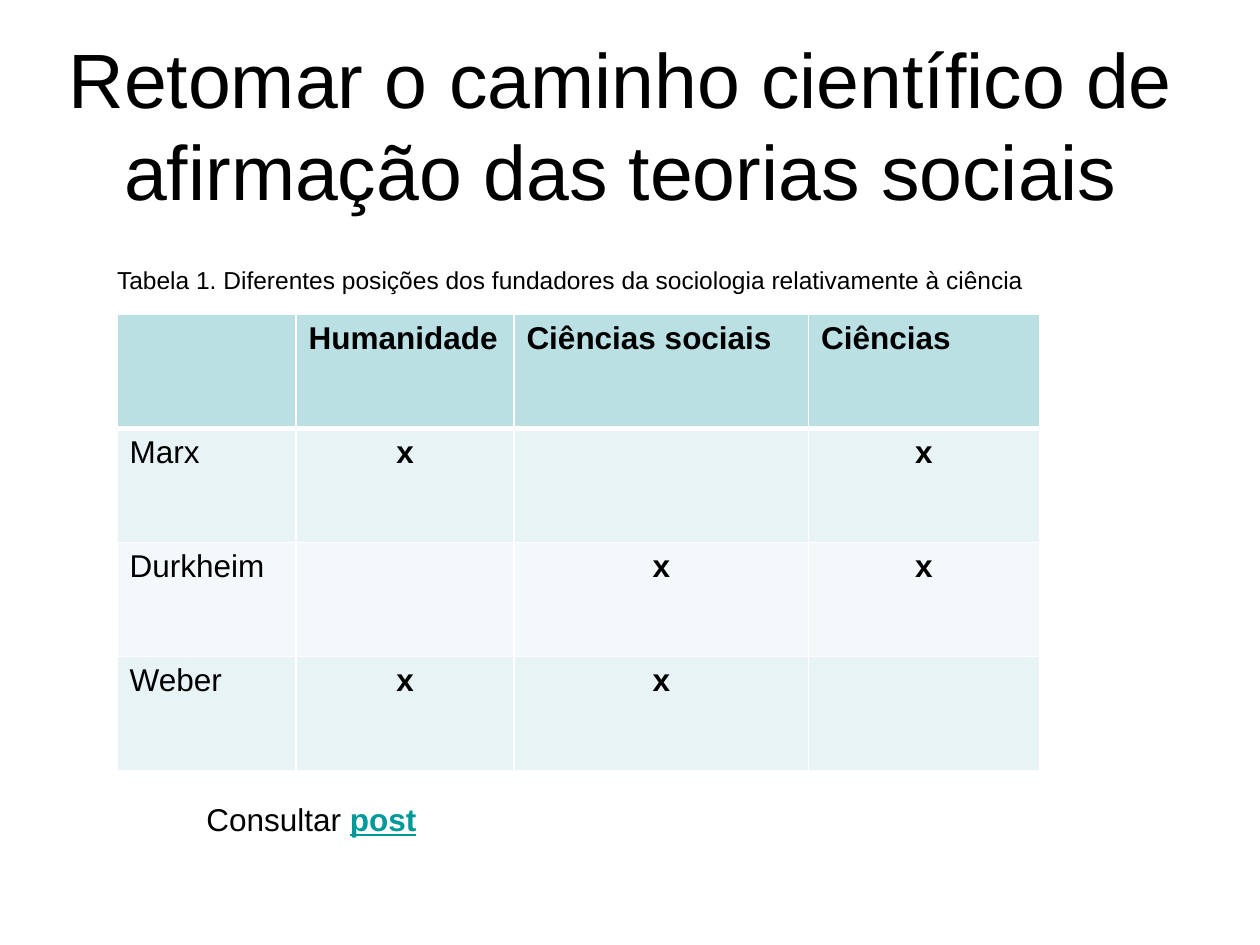
from lxml import etree
from pptx import Presentation
from pptx.dml.color import RGBColor
from pptx.enum import text
from pptx.oxml import ns
from pptx.util import Cm, Pt

BLACK, WHITE, LINK = "000000", "FFFFFF", "009999"
HEADER_FILL, BAND_FILLS = "BBE0E3", ("E7F3F4", "F3F9FA")
COLUMN_WIDTHS = (3.61, 4.39, 5.94, 4.65)
ROW_HEIGHT = 2.3
ROWS = (
    ("", "Humanidade", "Ciências sociais", "Ciências"),
    ("Marx", "x", "", "x"),
    ("Durkheim", "", "x", "x"),
    ("Weber", "x", "x", ""),
)


def color(value):
    return RGBColor.from_string(value)


def set_attributes(target, values):
    for name, value in values.items():
        setattr(target, name, value)


def add_run(paragraph, words, size, fill=BLACK, **styles):
    run = paragraph.add_run()
    run.text = words
    set_attributes(run.font, {"name": "Arial", "size": Pt(size), **styles})
    run.font.color.rgb = color(fill)


def place(shape, left, top, width, height):
    set_attributes(shape, {"left": Cm(left), "top": Cm(top),
                           "width": Cm(width), "height": Cm(height)})


def format_title(title, words):
    place(title, 1.09, 1.73, 22.86, 3.18)
    # The deeper bottom margin lifts the two lines above the box's middle
    set_attributes(title.text_frame, {
        "word_wrap": True, "auto_size": text.MSO_AUTO_SIZE.NONE,
        "vertical_anchor": text.MSO_ANCHOR.MIDDLE,
        "margin_top": 0, "margin_bottom": Cm(1.65)})
    paragraph = title.text_frame.paragraphs[0]
    paragraph.alignment = text.PP_ALIGN.CENTER
    add_run(paragraph, words, 44)


def add_label(slide, box, **frame_format):
    label = slide.shapes.add_textbox(*map(Cm, box))
    set_attributes(label.text_frame, {
        "word_wrap": False, "auto_size": text.MSO_AUTO_SIZE.SHAPE_TO_FIT_TEXT,
        **frame_format})
    return label.text_frame.paragraphs[0]


def add_border(cell, side, points):
    properties = cell._tc.get_or_add_tcPr()
    line = etree.SubElement(properties, ns.qn(f"a:ln{side}"), w=str(Pt(points)))
    fill = etree.SubElement(line, ns.qn("a:solidFill"))
    etree.SubElement(fill, ns.qn("a:srgbClr"), val=WHITE)


def format_cell(cell, words, row, column):
    for side in "LRTB":
        thick = (row, side) in ((0, "B"), (1, "T"))
        add_border(cell, side, 3 if thick else 1)
    cell.fill.solid()
    fill = BAND_FILLS[(row - 1) % 2] if row else HEADER_FILL
    cell.fill.fore_color.rgb = color(fill)
    if words:
        paragraph = cell.text_frame.paragraphs[0]
        if row and column:
            paragraph.alignment = text.PP_ALIGN.CENTER
        add_run(paragraph, words, 18, bold=row == 0 or column > 0)


def add_position_table(slide, left, top):
    table = slide.shapes.add_table(
        len(ROWS), len(COLUMN_WIDTHS), Cm(left), Cm(top),
        Cm(sum(COLUMN_WIDTHS)), Cm(ROW_HEIGHT * len(ROWS))).table
    for column, width in zip(table.columns, COLUMN_WIDTHS):
        column.width = Cm(width)
    for row, values in enumerate(ROWS):
        table.rows[row].height = Cm(ROW_HEIGHT)
        for column, words in enumerate(values):
            format_cell(table.cell(row, column), words, row, column)


def main():
    presentation = Presentation()
    set_attributes(presentation, {"slide_width": Cm(25.4), "slide_height": Cm(19.05)})
    slide = presentation.slides.add_slide(presentation.slide_layouts[5])

    # Title
    format_title(slide.shapes.title,
                 "Retomar o caminho científico de afirmação das teorias sociais")

    # Table and its caption
    caption = add_label(slide, (2.36, 5.33, 18.34, 0.61),
                        vertical_anchor=text.MSO_ANCHOR.MIDDLE,
                        margin_left=0, margin_top=0, margin_right=0, margin_bottom=0)
    add_run(caption, "Tabela 1. Diferentes posições dos fundadores da sociologia "
                     "relativamente à ciência", 14)
    add_position_table(slide, 2.36, 6.34)

    # Reference below the table
    reference = add_label(slide, (3.91, 16, 4.78, 1.02))
    add_run(reference, "Consultar ", 18)
    add_run(reference, "post", 18, LINK, bold=True, underline=True)

    presentation.save("out.pptx")


if __name__ == "__main__":
    main()
